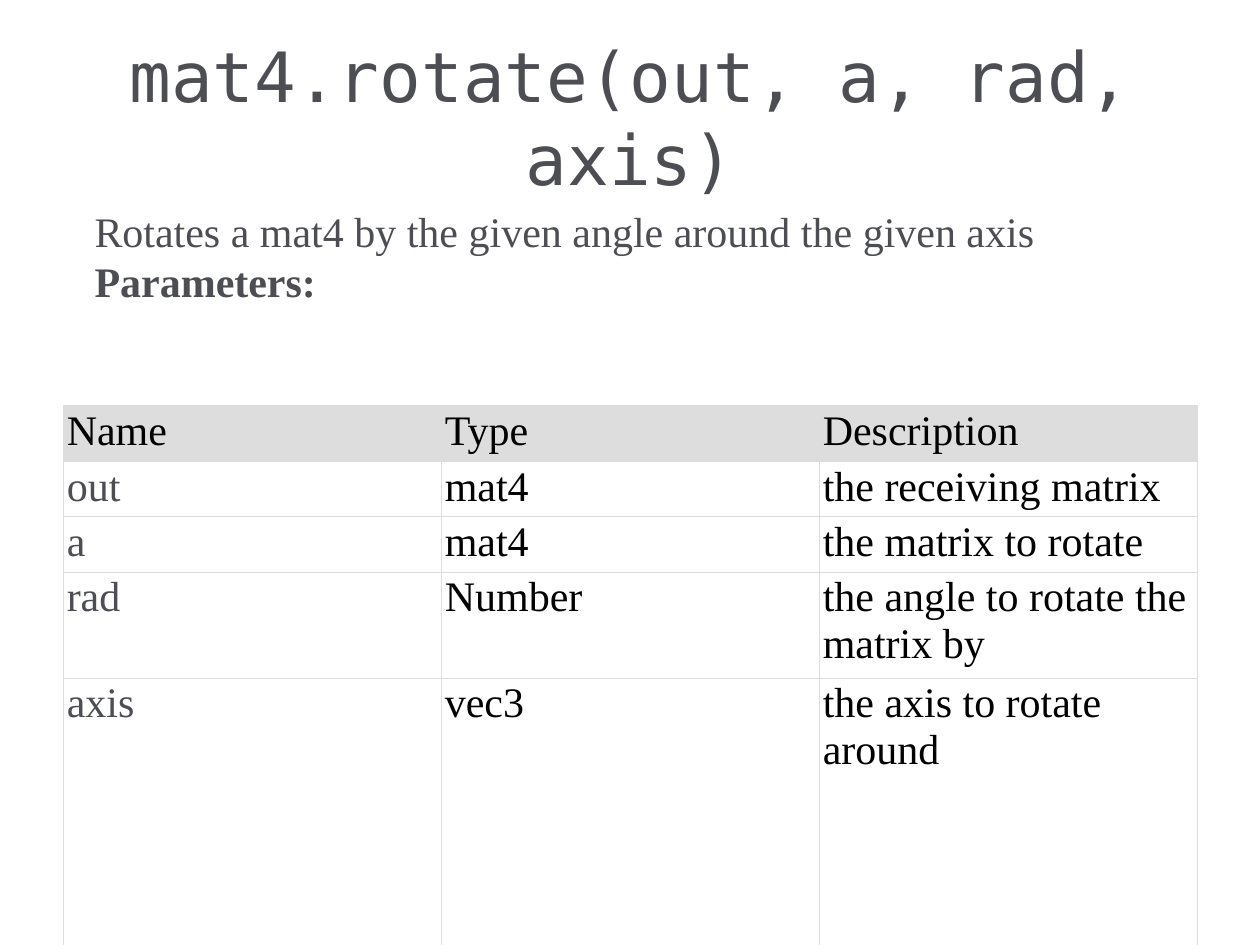
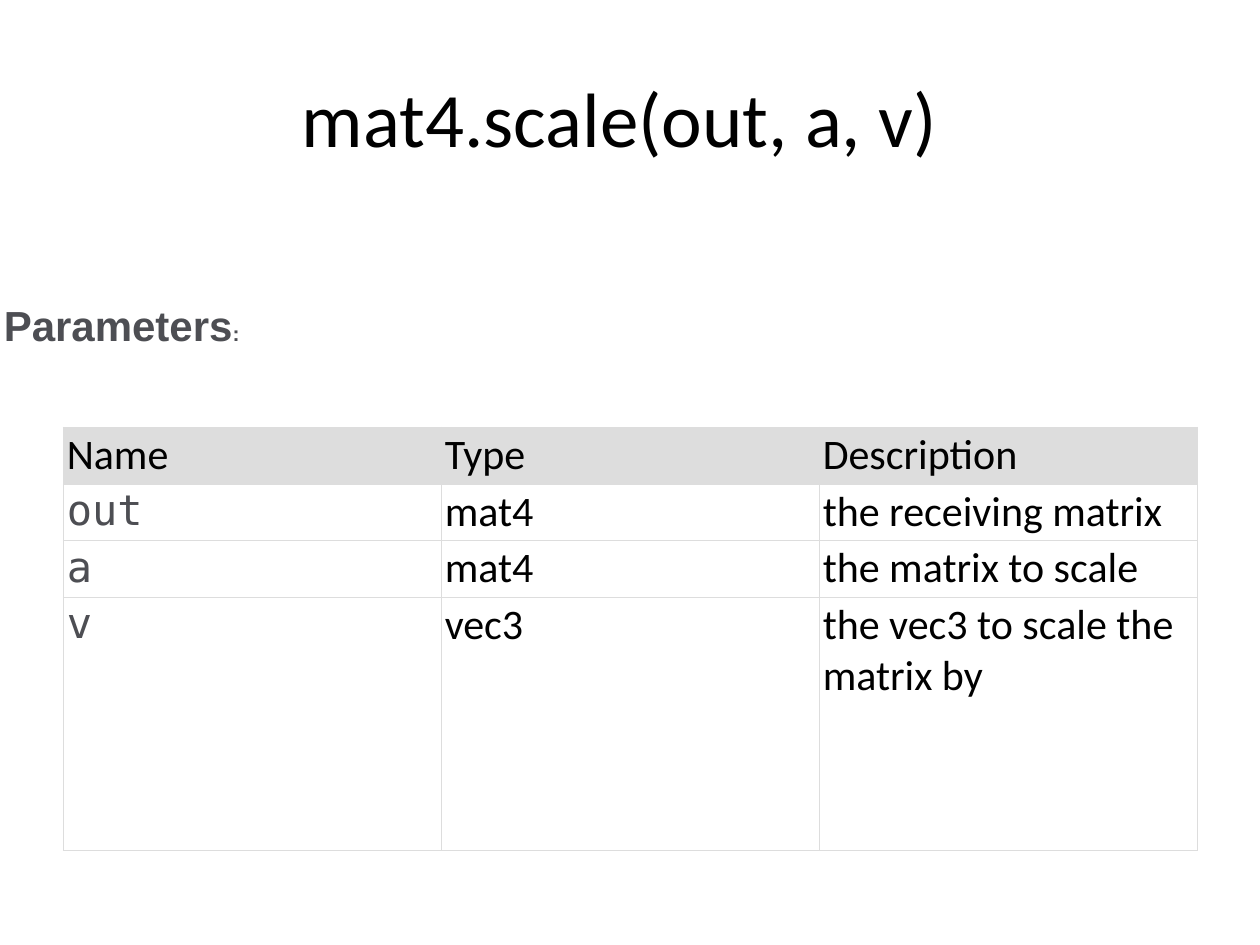
import pptx
import pptx.dml.color
import pptx.enum.text
import pptx.oxml
import pptx.oxml.ns
import pptx.util
from pptx.util import Inches

SLATE = pptx.dml.color.RGBColor(0x4D, 0x4E, 0x53)
BLACK = pptx.dml.color.RGBColor(0, 0, 0)
WHITE = pptx.dml.color.RGBColor(0xFF, 0xFF, 0xFF)
GRID = pptx.dml.color.RGBColor(0xDD, 0xDD, 0xDD)
MONO, SERIF, SANS, HEADING = "DejaVu Sans Mono", "Times New Roman", "Calibri", "Arial"
BODY_SIZE = 24
HEADER = ("Name", "Type", "Description")

# Each intro paragraph is a list of runs: (text, size, bold)
functions = [
    dict(title="mat4.rotate(out, a, rad, axis)",
         title_style=(MONO, 39.6, SLATE), title_right_inset=0.1,
         intro=[[("Rotates a mat4 by the given angle around the given axis", BODY_SIZE, False)],
                [("Parameters:", BODY_SIZE, True)]],
         intro_font=SERIF, intro_box=(0.75, 1.63, 7.52, 1.22),
         table_top=3.22, row_heights=(0.41, 0.41, 0.41, 0.78, 2.25),
         name_font=SERIF, table_font=SERIF,
         parameters=[("out", "mat4", "the receiving matrix"),
                     ("a", "mat4", "the matrix to rotate"),
                     ("rad", "Number", "the angle to rotate the matrix by"),
                     ("axis", "vec3", "the axis to rotate around")]),
    dict(title="mat4.scale(out, a, v)",
         title_style=(SANS, 44, BLACK), title_right_inset=0.26,
         intro=[[("Parameters", BODY_SIZE, True), (":", 12, True)]],
         intro_font=HEADING, intro_box=(0.03, 2.38, 1.89, 0.82),
         table_top=3.39, row_heights=(0.45, 0.45, 0.45, 2.01),
         name_font=MONO, table_font=SANS,
         parameters=[("out", "mat4", "the receiving matrix"),
                     ("a", "mat4", "the matrix to scale"),
                     ("v", "vec3", "the vec3 to scale the matrix by")]),
]


def style_run(run, font, size, color, bold=False):
    run.font.name = font
    run.font.size = pptx.util.Pt(size)
    run.font.color.rgb = color
    run.font.bold = bold


def add_borders(cell):
    properties = cell._tc.get_or_add_tcPr()
    for side in ("lnL", "lnR", "lnT", "lnB"):
        properties.append(pptx.oxml.parse_xml(
            f'<a:{side} {pptx.oxml.ns.nsdecls("a")} w="{pptx.util.Pt(0.38)}">'
            f'<a:solidFill><a:srgbClr val="{GRID}"/></a:solidFill></a:{side}>'))


deck = pptx.Presentation()
deck.slide_width, deck.slide_height = Inches(10), Inches(7.5)

for function in functions:
    slide = deck.slides.add_slide(deck.slide_layouts[6])

    # Function signature as title
    title = slide.shapes.add_textbox(Inches(0.5), Inches(0.3), Inches(9), Inches(1.25)).text_frame
    title.word_wrap = True
    title.vertical_anchor = pptx.enum.text.MSO_ANCHOR.MIDDLE
    title.margin_right = Inches(function["title_right_inset"])
    title.text = function["title"]
    title.paragraphs[0].alignment = pptx.enum.text.PP_ALIGN.CENTER
    style_run(title.paragraphs[0].runs[0], *function["title_style"])

    # Parameter table
    rows = [HEADER] + function["parameters"]
    heights = function["row_heights"]
    table = slide.shapes.add_table(len(rows), len(HEADER), Inches(0.5), Inches(function["table_top"]),
                                   Inches(9), Inches(sum(heights))).table
    table.first_row = table.horz_banding = False
    for r, (row, height) in enumerate(zip(rows, heights)):
        table.rows[r].height = Inches(height)
        for c, text in enumerate(row):
            cell = table.cell(r, c)
            cell.margin_left = cell.margin_right = Inches(0.03)
            cell.margin_top = cell.margin_bottom = Inches(0.02)
            add_borders(cell)
            cell.fill.solid()
            cell.fill.fore_color.rgb = GRID if r == 0 else WHITE
            cell.text = text
            is_name = r > 0 and c == 0
            style_run(cell.text_frame.paragraphs[0].runs[0],
                      function["name_font"] if is_name else function["table_font"],
                      BODY_SIZE, SLATE if is_name else BLACK)

    # Introduction above the table
    intro_box = slide.shapes.add_textbox(*map(Inches, function["intro_box"]))
    intro_box.fill.solid()
    intro_box.fill.fore_color.rgb = WHITE
    intro = intro_box.text_frame
    intro.word_wrap = True
    intro.margin_left = intro.margin_right = intro.margin_top = intro.margin_bottom = 0
    for i, runs in enumerate(function["intro"]):
        paragraph = intro.add_paragraph() if i else intro.paragraphs[0]
        for text, size, bold in runs:
            run = paragraph.add_run()
            run.text = text
            style_run(run, function["intro_font"], size, SLATE, bold)

deck.save("out.pptx")
